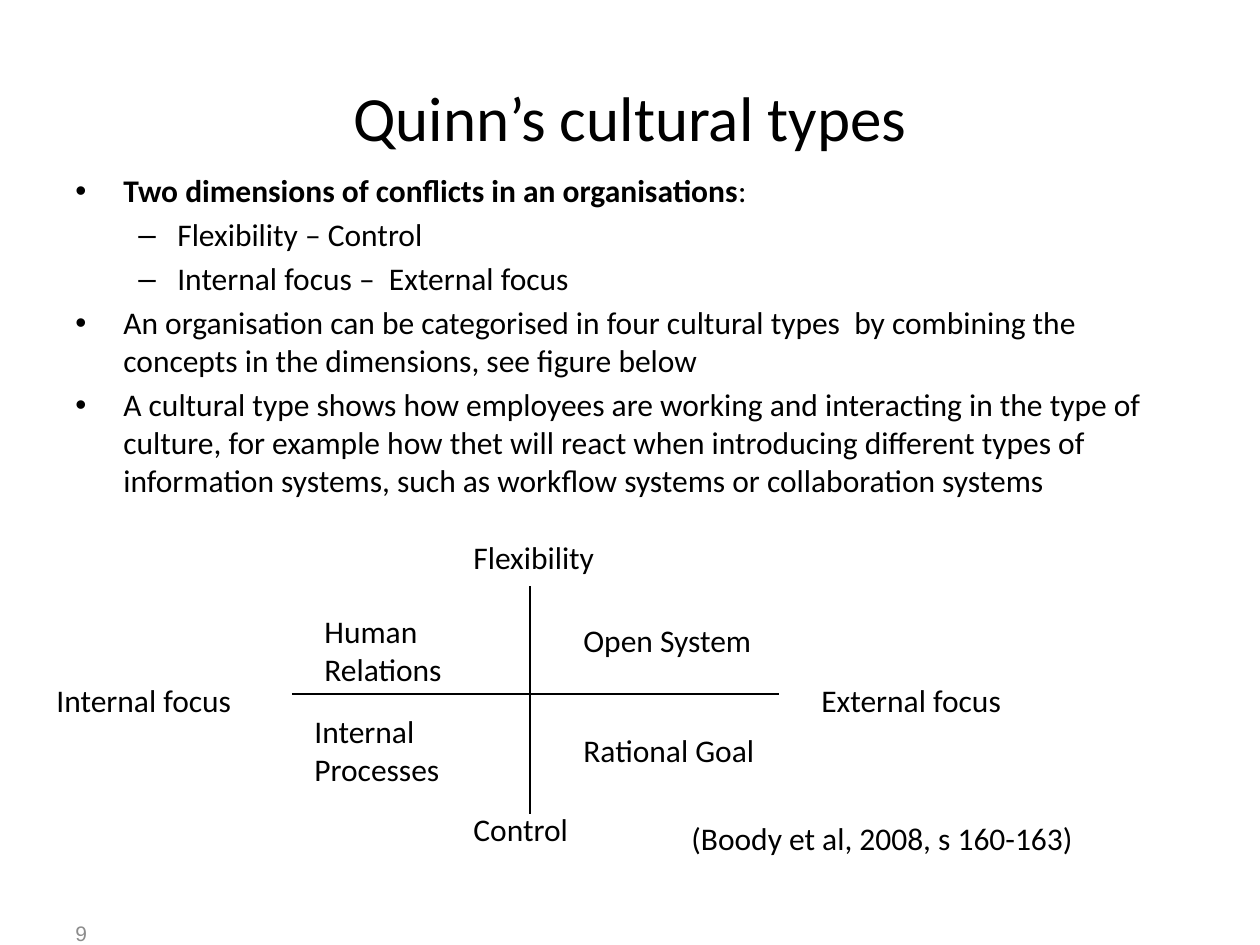
"""Build a slide on Quinn's cultural types with bullets and a two-axis figure."""
from lxml import etree
from pptx import Presentation
from pptx.dml.color import RGBColor
from pptx.enum.shapes import MSO_CONNECTOR
from pptx.enum.text import MSO_ANCHOR, PP_ALIGN
from pptx.oxml.ns import qn
from pptx.util import Pt

LINE = MSO_CONNECTOR.STRAIGHT
TOP, MID = MSO_ANCHOR.TOP, MSO_ANCHOR.MIDDLE
LEFT, MIDST = PP_ALIGN.LEFT, PP_ALIGN.CENTER
HUES = {"ink": "000000", "grey": "8C8C8C"}


def px(num):
    return round(num * 914400 / 126)


def write(para, text, size=18, font="Calibri", hue="ink", bold=False, align=LEFT):
    para.alignment = align
    run = para.add_run()
    run.text = text
    run.font.size = Pt(size)
    run.font.name = font
    run.font.bold = bold
    run.font.color.rgb = RGBColor.from_string(HUES[hue])


deck = Presentation()
deck.slide_width, deck.slide_height = px(1260), px(945)
slide = deck.slides.add_slide(deck.slide_layouts[6])
shapes = slide.shapes

labels = [
    ("Quinn’s cultural types", 63, 38, 1134, 157, MID, {"size": 36, "align": MIDST}),
    ("9", 63, 908, 294, 50, MID, {"size": 12, "font": "Arial", "hue": "grey"}),
    ("(Boody et al, 2008, s 160-163)", 679, 813, 486, 50, TOP, {}),
    ("Flexibility", 461, 532, 169, 50, TOP, {}),
    ("Control", 461, 804, 169, 50, TOP, {}),
    ("External focus", 809, 675, 328, 50, TOP, {}),
    ("Internal focus", 44, 675, 268, 50, TOP, {}),
    ("Open System", 571, 615, 248, 50, TOP, {}),
    ("Rational Goal", 571, 725, 248, 50, TOP, {}),
    ("Human Relations", 312, 606, 208, 127, TOP, {}),
    ("Internal Processes", 302, 706, 248, 89, TOP, {}),
]
for text, x, y, wide, high, anchor, style in labels:
    frame = shapes.add_textbox(px(x), px(y), px(wide), px(high)).text_frame
    frame.word_wrap = True
    frame.vertical_anchor = anchor
    write(frame.paragraphs[0], text, **style)

points = [
    (0, [("Two dimensions of conflicts in an organisations", True), (":", False)]),
    (1, [("Flexibility – Control", False)]),
    (1, [("Internal focus –  External focus", False)]),
    (0, [("An organisation can be categorised in four cultural types  by combining "
          "the concepts in the dimensions, see figure below", False)]),
    (0, [("A cultural type shows how employees are working and interacting in the "
          "type of culture, for example how thet will react when introducing "
          "different types of information systems, such as workflow systems or "
          "collaboration systems", False)]),
]
marks = [("•", 48, 48), ("–", 102, 39)]
body = shapes.add_textbox(px(63), px(165), px(1134), px(714)).text_frame
body.word_wrap = True
for num, (level, runs) in enumerate(points):
    para = body.add_paragraph() if num else body.paragraphs[0]
    para.level = level
    para.space_before = Pt(3.6)
    for text, bold in runs:
        write(para, text, bold=bold)
    mark, left, hang = marks[level]
    props = para._p.get_or_add_pPr()
    props.set("marL", str(px(left)))
    props.set("indent", str(-px(hang)))
    etree.SubElement(props, qn("a:buFont"), typeface="Arial")
    etree.SubElement(props, qn("a:buChar"), char=mark)

for ends in [(292, 694, 779, 694), (530, 814, 530, 586)]:
    axis = shapes.add_connector(LINE, *map(px, ends))
    axis.line.width = Pt(0.75)
    axis.line.color.rgb = RGBColor.from_string(HUES["ink"])
    etree.SubElement(axis._element.spPr, qn("a:effectLst"))

deck.save("out.pptx")
